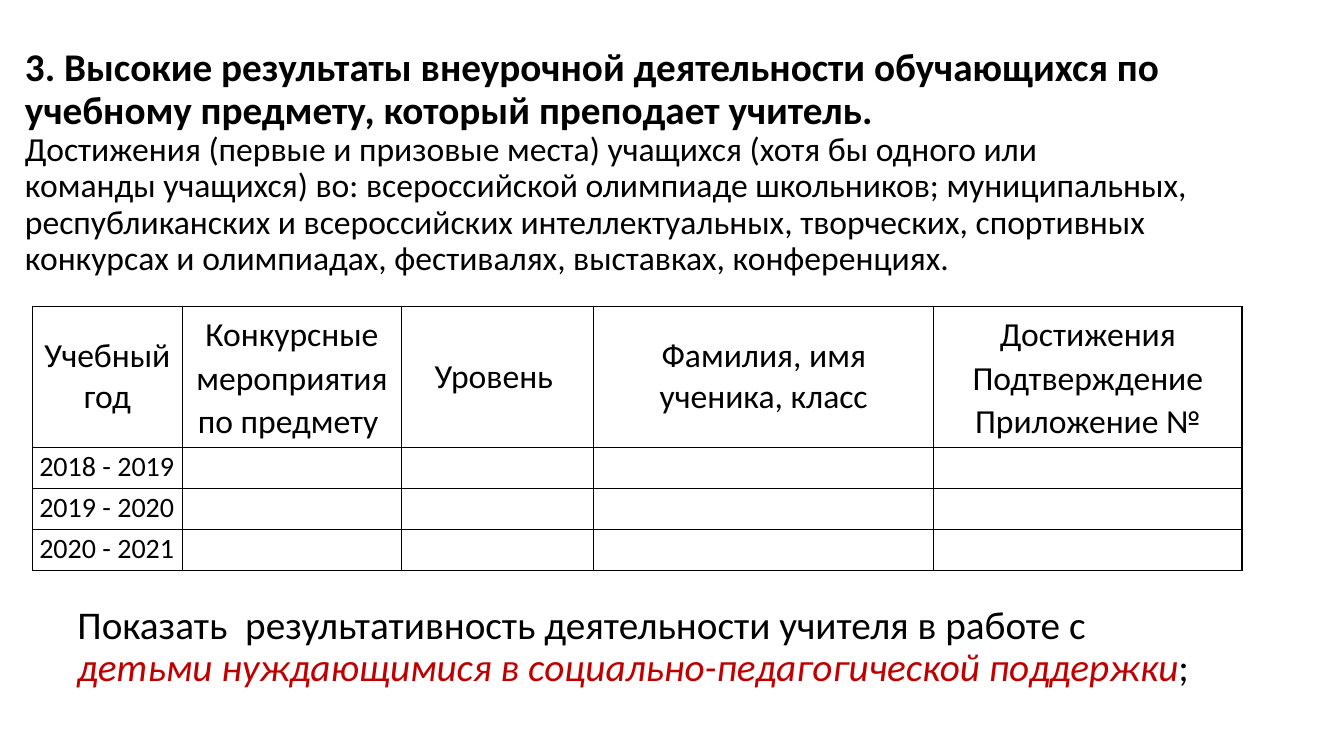
"""Builds a slide on pupils' extracurricular results with a table by school year."""
from dataclasses import dataclass

from lxml.etree import SubElement
from pptx import Presentation
from pptx.dml.color import RGBColor
from pptx.enum.text import MSO_ANCHOR, PP_ALIGN
from pptx.oxml.ns import qn
from pptx.util import Inches, Pt


@dataclass(frozen=True)
class Theme:
    font: str = "Calibri"
    text: str = "000000"
    accent: str = "C00000"
    heading: int = 28
    body: int = 24
    year: int = 20
    border: int = 1
    tight: float = 0.9
    loose: float = 1.07


THEME = Theme()

HEADING = ("3. Высокие результаты внеурочной деятельности обучающихся по "
           "учебному предмету, который преподает учитель.")
DETAILS = ("Достижения (первые и призовые места) учащихся (хотя бы одного или\v"
           "команды учащихся) во: всероссийской олимпиаде школьников; муниципальных, "
           "республиканских и всероссийских интеллектуальных, творческих, спортивных "
           "конкурсах и олимпиадах, фестивалях, выставках, конференциях.")
CONCLUSION = [
    ("Показать  результативность деятельности учителя в работе с ", False),
    ("детьми нуждающимися в социально-педагогической поддержки", True),
    (";", False),
]
COLUMNS = [
    ("Учебный год", 11.18),
    ("Конкурсные мероприятия\nпо предмету ", 16.28),
    ("Уровень ", 14.33),
    ("Фамилия, имя ученика, класс", 25.28),
    ("Достижения\nПодтверждение Приложение №", 22.95),
]
YEARS = ["2018 - 2019", "2019 - 2020", "2020 - 2021"]

TITLE_AREA = (1.12, 14.27, 95.92, 19.33)
TABLE_AREA = (2.4, 40.53, 90, 34.96)
CONCLUSION_AREA = (5.02, 79.47, 86.25, 14.93)
HEADER_HEIGHT, YEAR_HEIGHT = 18.67, 5.43
TITLE_BOTTOM_INSET = 5.47

presentation = Presentation()
presentation.slide_width = Inches(13.33)
presentation.slide_height = Inches(7.5)


def across(percent):
    return int(presentation.slide_width * percent / 100)


def down(percent):
    return int(presentation.slide_height * percent / 100)


def place(area):
    left, top, width, height = area
    return across(left), down(top), across(width), down(height)


def style(paragraph, size, bold=False, spacing=None, alignment=None):
    paragraph.line_spacing = spacing
    paragraph.alignment = alignment
    for run in paragraph.runs:
        run.font.name = THEME.font
        run.font.size = Pt(size)
        run.font.bold = bold
        run.font.color.rgb = RGBColor.from_string(THEME.text)


def add_text_frame(slide, area):
    text_frame = slide.shapes.add_textbox(*place(area)).text_frame
    text_frame.word_wrap = True
    return text_frame


def add_title(slide):
    text_frame = add_text_frame(slide, TITLE_AREA)
    text_frame.vertical_anchor = MSO_ANCHOR.MIDDLE
    text_frame.margin_bottom = down(TITLE_BOTTOM_INSET)
    text_frame.text = f"{HEADING}\n{DETAILS}"
    heading, details = text_frame.paragraphs
    style(heading, THEME.heading, bold=True, spacing=THEME.tight)
    style(details, THEME.body, spacing=THEME.tight)


def add_conclusion(slide):
    paragraph = add_text_frame(slide, CONCLUSION_AREA).paragraphs[0]
    for text, _ in CONCLUSION:
        paragraph.add_run().text = text
    style(paragraph, THEME.heading, spacing=THEME.tight)
    for run, (_, emphasised) in zip(paragraph.runs, CONCLUSION):
        if emphasised:
            run.font.italic = True
            run.font.color.rgb = RGBColor.from_string(THEME.accent)


def draw_borders(cell):
    properties = cell._tc.get_or_add_tcPr()
    for side in ("a:lnL", "a:lnR", "a:lnT", "a:lnB"):
        line = SubElement(properties, qn(side), w=str(Pt(THEME.border)))
        fill = SubElement(line, qn("a:solidFill"))
        SubElement(fill, qn("a:srgbClr"), val=THEME.text)
    cell.fill.background()


def fill_header(cell, text):
    cell.text = text
    cell.vertical_anchor = MSO_ANCHOR.MIDDLE
    paragraphs = cell.text_frame.paragraphs
    spacing = THEME.loose if len(paragraphs) > 1 else None
    for paragraph in paragraphs:
        style(paragraph, THEME.body, spacing=spacing, alignment=PP_ALIGN.CENTER)


def fill_year(cell, text):
    cell.text = text
    cell.margin_left = cell.margin_right = Inches(0.07)
    cell.margin_top = cell.margin_bottom = 0
    style(cell.text_frame.paragraphs[0], THEME.year,
          spacing=THEME.loose, alignment=PP_ALIGN.JUSTIFY)


def add_results_table(slide):
    table = slide.shapes.add_table(len(YEARS) + 1, len(COLUMNS), *place(TABLE_AREA)).table
    table.first_row = table.horz_banding = False
    for row in table.rows:
        row.height = down(YEAR_HEIGHT)
    table.rows[0].height = down(HEADER_HEIGHT)
    for cell in table.iter_cells():
        draw_borders(cell)
    for index, (label, width) in enumerate(COLUMNS):
        table.columns[index].width = across(width)
        fill_header(table.cell(0, index), label)
    for index, year in enumerate(YEARS, start=1):
        fill_year(table.cell(index, 0), year)


def main():
    slide = presentation.slides.add_slide(presentation.slide_layouts[6])
    add_title(slide)
    add_conclusion(slide)
    add_results_table(slide)
    presentation.save("out.pptx")


if __name__ == "__main__":
    main()
